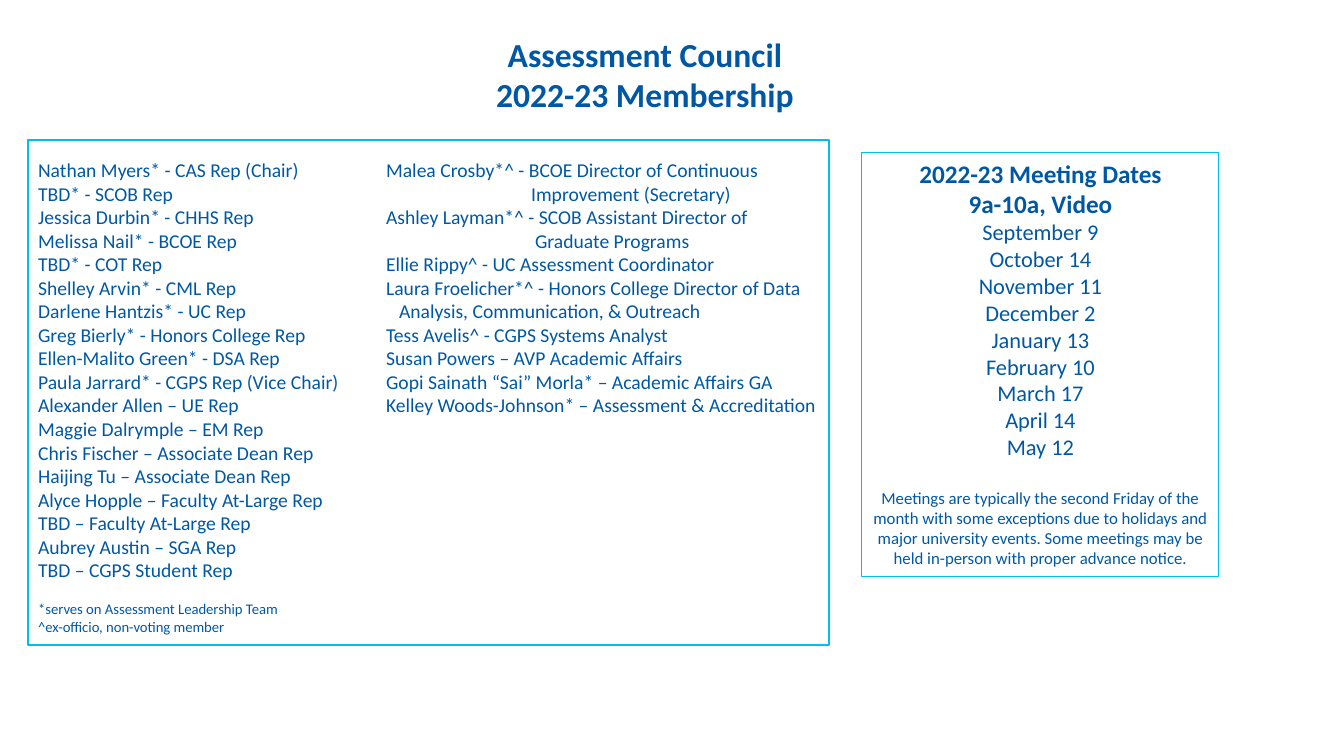
from dataclasses import dataclass
from lxml import etree
from pptx import Presentation
from pptx import util as u
from pptx.dml.color import RGBColor
from pptx.enum import shapes, text
from pptx.oxml.ns import qn


@dataclass(frozen=True)
class Theme:
    font: str = "Calibri"
    ink: str = "0058A4"
    paper: str = "FFFFFF"
    edge: str = "00BFF0"
    title: float = 24
    head: float = 18
    date: float = 16
    body: float = 14
    note: float = 12
    foot: float = 10.5


theme = Theme()


def px(n):
    return u.Inches(n / 100.8)


def write(box, line, size=theme.body, bold=False, center=False, gap=0, hang=0):
    frame = box.text_frame
    para = frame.add_paragraph() if frame.text else frame.paragraphs[0]
    props = para._p.get_or_add_pPr()
    props.set("marL", str(px(hang)))
    props.set("indent", str(-px(hang)))
    etree.SubElement(props, qn("a:buNone"))
    para.alignment = text.PP_ALIGN.CENTER if center else text.PP_ALIGN.LEFT
    para.space_before = u.Pt(gap)
    run = para.add_run()
    run.text = line
    run.font.name = theme.font
    run.font.size = u.Pt(size)
    run.font.bold = bold
    run.font.color.rgb = RGBColor.from_string(theme.ink)


deck = Presentation()
deck.slide_width, deck.slide_height = px(1344), px(756)
slide = deck.slides.add_slide(deck.slide_layouts[3])
title, left, right = list(slide.placeholders)[:3]
for spare in list(slide.placeholders)[3:]:
    spare.element.getparent().remove(spare.element)

# Frames around the members and the dates
panel = slide.shapes.add_shape(shapes.MSO_SHAPE.RECTANGLE, px(28), px(140), px(801), px(505))
panel.fill.solid()
panel.fill.fore_color.rgb = RGBColor.from_string(theme.paper)
panel.element.getparent().insert(2, panel.element)
dates = slide.shapes.add_shape(shapes.MSO_SHAPE.RECTANGLE, px(862), px(153), px(357), px(424))
dates.fill.background()
for box, width in ((panel, 1), (dates, 0.75)):
    box.shadow.inherit = False
    box.line.color.rgb = RGBColor.from_string(theme.edge)
    box.line.width = u.Pt(width)

# Text areas
areas = (
    (title, 182, 29, 926, 92),
    (left, 28, 153, 446, 509),
    (right, 376, 153, 454, 319),
)
for box, *area in areas:
    box.left, box.top, box.width, box.height = map(px, area)
for box in (title, left, right, dates):
    box.text_frame.word_wrap = True
    box.text_frame.auto_size = text.MSO_AUTO_SIZE.NONE
    box.text_frame.vertical_anchor = text.MSO_ANCHOR.TOP

# Title
for line in ("Assessment Council", "2022-23 Membership"):
    write(title, line, size=theme.title, bold=True, center=True)

# Representatives, with the key to the marks
reps = (
    "Nathan Myers* - CAS Rep (Chair)",
    "TBD* - SCOB Rep",
    "Jessica Durbin* - CHHS Rep",
    "Melissa Nail* - BCOE Rep",
    "TBD* - COT Rep",
    "Shelley Arvin* - CML Rep",
    "Darlene Hantzis* - UC Rep",
    "Greg Bierly* - Honors College Rep",
    "Ellen-Malito Green* - DSA Rep",
    "Paula Jarrard* - CGPS Rep (Vice Chair)",
    "Alexander Allen – UE Rep",
    "Maggie Dalrymple – EM Rep",
    "Chris Fischer – Associate Dean Rep",
    "Haijing Tu – Associate Dean Rep",
    "Alyce Hopple – Faculty At-Large Rep",
    "TBD – Faculty At-Large Rep",
    "Aubrey Austin – SGA Rep",
    "TBD – CGPS Student Rep",
)
for line in reps:
    write(left, line)
write(left, "*serves on Assessment Leadership Team", size=theme.foot, gap=13)
write(left, "^ex-officio, non-voting member", size=theme.foot)

# Staff, with the hanging indent of wrapped lines
staff = (
    ("Malea Crosby*^ - BCOE Director of Continuous Improvement (Secretary)", 145),
    ("Ashley Layman*^ - SCOB Assistant Director of Graduate Programs", 149),
    ("Ellie Rippy^ - UC Assessment Coordinator", 0),
    ("Laura Froelicher*^ - Honors College Director of Data Analysis, Communication, & Outreach", 13),
    ("Tess Avelis^ - CGPS Systems Analyst", 0),
    ("Susan Powers – AVP Academic Affairs", 0),
    ("Gopi Sainath “Sai” Morla* – Academic Affairs GA", 0),
    ("Kelley Woods-Johnson* – Assessment & Accreditation", 0),
)
for line, hang in staff:
    write(right, line, hang=hang)

# Meeting dates
for line in ("2022-23 Meeting Dates", "9a-10a, Video"):
    write(dates, line, size=theme.head, bold=True, center=True)
days = ("September 9", "October 14", "November 11", "December 2", "January 13",
        "February 10", "March 17", "April 14", "May 12")
for day in days:
    write(dates, day, size=theme.date, center=True)
write(dates, "Meetings are typically the second Friday of the month with some exceptions "
      "due to holidays and major university events. Some meetings may be held "
      "in-person with proper advance notice.", size=theme.note, center=True, gap=19.5)

deck.save("out.pptx")
